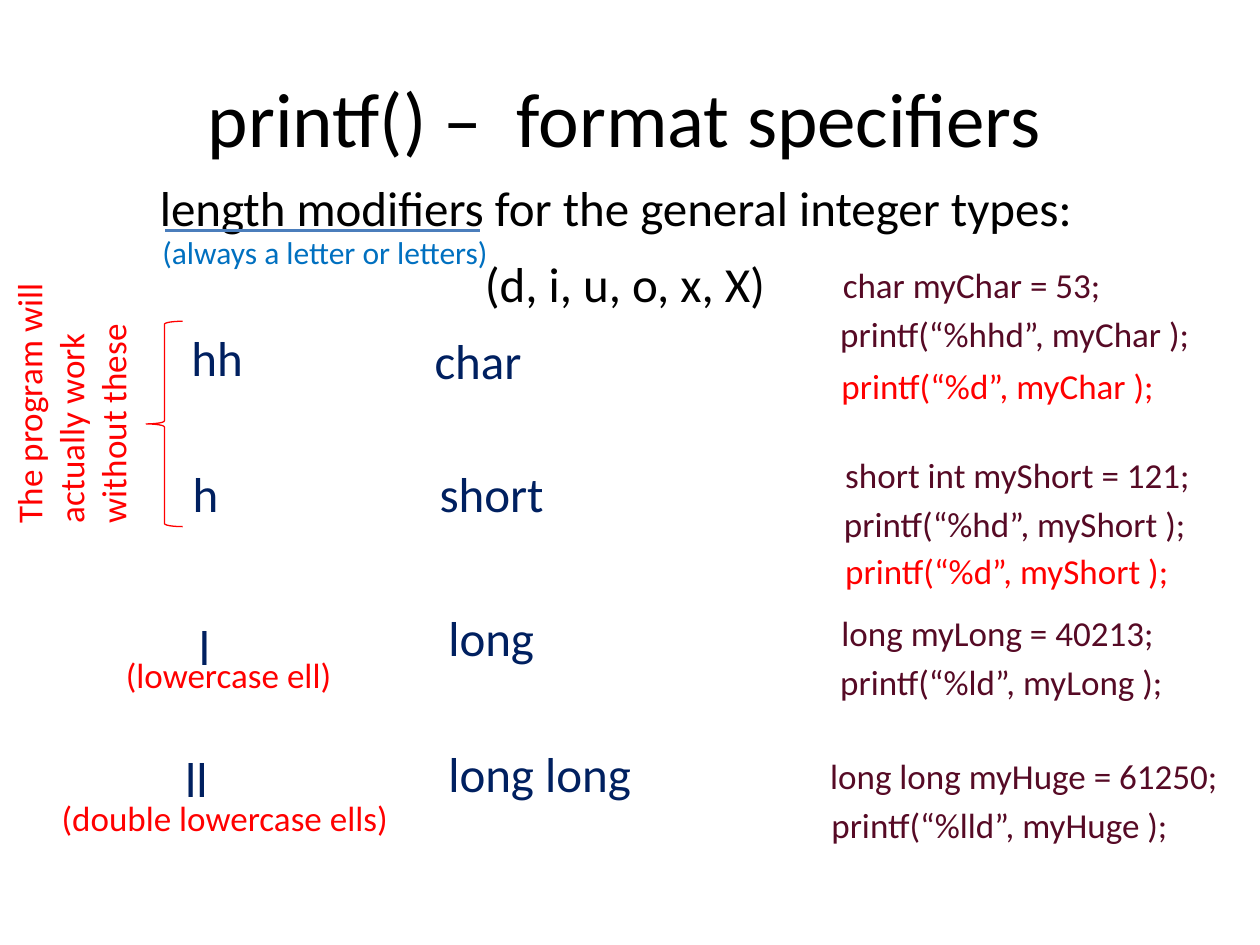
from lxml import etree
from pptx import Presentation
from pptx.dml.color import RGBColor
from pptx.enum.shapes import MSO_CONNECTOR, MSO_SHAPE
from pptx.enum.text import MSO_ANCHOR, PP_ALIGN
from pptx.oxml.ns import qn
from pptx.util import Inches, Pt

STRAIGHT = MSO_CONNECTOR.STRAIGHT
LEFT_BRACE = MSO_SHAPE.LEFT_BRACE
MIDDLE = MSO_ANCHOR.MIDDLE
CENTER = PP_ALIGN.CENTER

FONT = "Calibri"
TITLE_ONLY = 5
COLORS = {
    "black": "000000",
    "navy": "002060",
    "code": "560A25",
    "red": "FF0000",
    "blue": "0070C0",
    "underline": "4B7EBC",
}

# Each entry: text, left, top, width, height
HEADINGS = [
    ("length modifiers for the general integer types:", 1.17, 1.36, 7.78, 0.66),
    ("(d, i, u, o, x, X)", 3.75, 1.96, 2.64, 0.66),
]
MODIFIERS = [
    ("hh", 1.42, 2.55, 0.85, 0.62),
    ("h", 1.43, 3.63, 0.85, 0.62),
    ("l", 1.48, 4.84, 0.85, 0.62),
    ("ll", 1.37, 5.89, 0.85, 0.62),
]
TYPES = [
    ("char", 3.35, 2.57, 1.19, 0.62),
    ("short", 3.39, 3.63, 1.19, 0.62),
    ("long", 3.46, 4.77, 1.93, 0.62),
    ("long long", 3.46, 5.85, 1.86, 0.59),
]
CODE = [
    ("char myChar = 53;", 6.59, 2.04, 3.08, 0.45),
    ("printf(“%hhd”, myChar );", 6.57, 2.43, 3.17, 0.45),
    ("short int myShort = 121;", 6.61, 3.55, 3.08, 0.45),
    ("printf(“%hd”, myShort );", 6.6, 3.94, 3.17, 0.45),
    ("long myLong = 40213;", 6.58, 4.8, 3.08, 0.45),
    ("printf(“%ld”, myLong );", 6.57, 5.19, 3.17, 0.45),
    ("long long myHuge = 61250;", 6.49, 5.94, 3.51, 0.45),
    ("printf(“%lld”, myHuge );", 6.5, 6.33, 3.19, 0.45),
]
RED_NOTES = [
    ("(lowercase ell)", 0.9, 5.14, 1.99, 0.48),
    ("(double lowercase ells)", 0.39, 6.27, 3, 0.48),
    ("printf(“%d”, myChar );", 6.58, 2.84, 2.72, 0.45),
    ("printf(“%d”, myShort );", 6.61, 4.31, 2.89, 0.45),
]
BRACE_NOTE = ("The program will actually work without these", 0.01, 1.96, 1.09, 2.29)
UNDERLINE_NOTE = ("(always a letter or letters)", 1.19, 1.8, 2.81, 0.4)


def color(name):
    return RGBColor.from_string(COLORS[name])


def format_text(paragraph, size, color_name):
    for run in paragraph.runs:
        run.font.name = FONT
        run.font.size = Pt(size)
        run.font.color.rgb = color(color_name)


def set_title(slide, text):
    title = slide.shapes.title
    title.left, title.top = Inches(0.17), Inches(0.3)
    title.width, title.height = Inches(9.58), Inches(1.25)
    title.text_frame.text = text
    title.text_frame.vertical_anchor = MIDDLE
    paragraph = title.text_frame.paragraphs[0]
    paragraph.alignment = CENTER
    format_text(paragraph, 44, "black")


def add_text(slide, label, size, color_name):
    text, *box = label
    shape = slide.shapes.add_textbox(*map(Inches, box))
    text_frame = shape.text_frame
    text_frame.word_wrap = True
    text_frame.text = text
    paragraph = text_frame.paragraphs[0]
    format_text(paragraph, size, color_name)
    # Space before, relative to the line
    properties = paragraph._p.get_or_add_pPr()
    space_before = etree.SubElement(properties, qn("a:spcBef"))
    etree.SubElement(space_before, qn("a:spcPct")).set("val", "20000")
    return shape


def add_vertical_text(slide, label, size, color_name):
    shape = add_text(slide, label, size, color_name)
    shape.text_frame._txBody.bodyPr.set("vert", "vert270")


def add_brace(slide, left, top, width, height):
    brace = slide.shapes.add_shape(LEFT_BRACE, *map(Inches, (left, top, width, height)))
    brace.shadow.inherit = False
    brace.fill.background()
    brace.line.color.rgb = color("red")
    brace.line.width = Pt(0.75)


def add_underline(slide, left, right, top):
    line = slide.shapes.add_connector(STRAIGHT, *map(Inches, (left, top, right, top)))
    line.line.color.rgb = color("underline")
    line.line.width = Pt(1.75)
    etree.SubElement(line._element.spPr, qn("a:effectLst"))


def main():
    presentation = Presentation()
    presentation.slide_width, presentation.slide_height = Inches(10), Inches(7.5)
    slide = presentation.slides.add_slide(presentation.slide_layouts[TITLE_ONLY])
    set_title(slide, "printf() –  format specifiers")

    # Headings, table-like columns, code samples and remarks
    groups = [
        (HEADINGS, 28, "black"),
        (MODIFIERS, 28, "navy"),
        (TYPES, 28, "navy"),
        (CODE, 20, "code"),
        (RED_NOTES, 20, "red"),
    ]
    for labels, size, color_name in groups:
        for label in labels:
            add_text(slide, label, size, color_name)

    # Brace with its remark
    add_brace(slide, 1.16, 2.55, 0.29, 1.63)
    add_vertical_text(slide, BRACE_NOTE, 20, "red")

    # Underlined term with its remark
    add_underline(slide, 1.31, 3.81, 1.83)
    add_text(slide, UNDERLINE_NOTE, 18, "blue")

    presentation.save("out.pptx")


if __name__ == "__main__":
    main()
